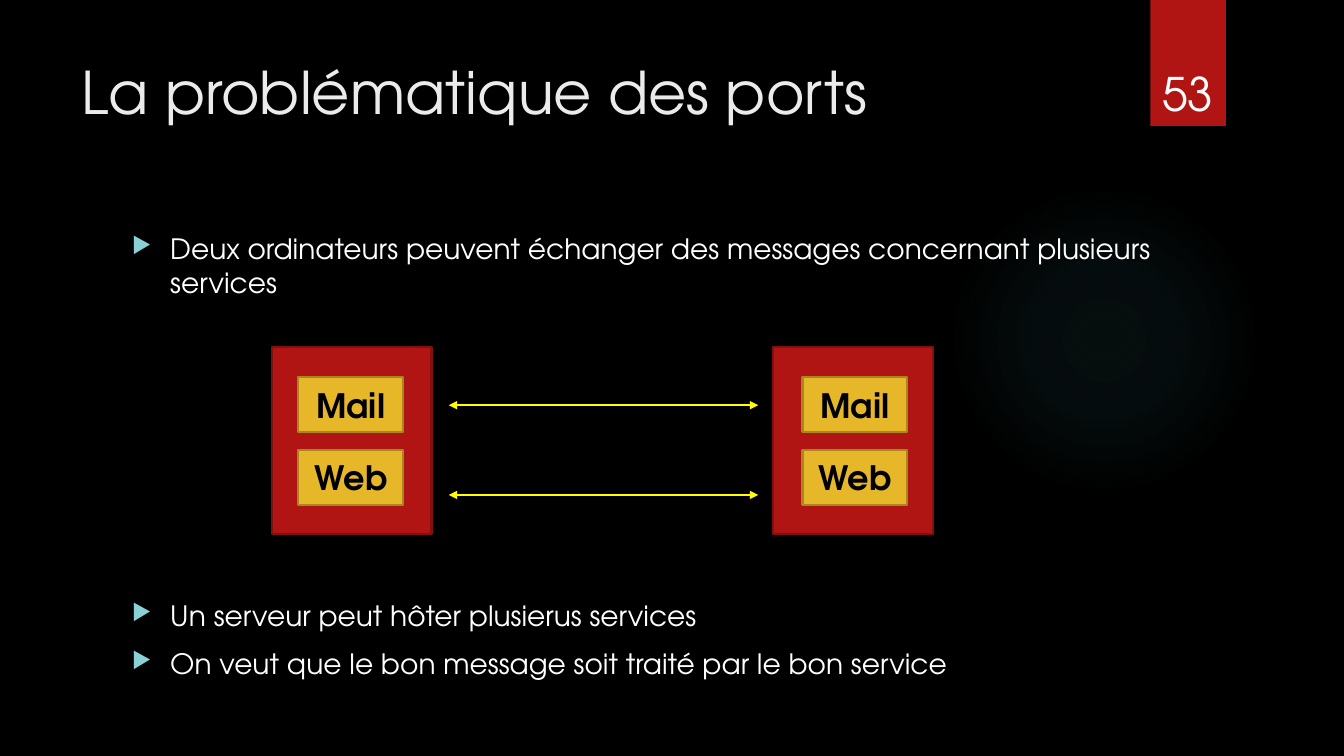
from dataclasses import dataclass

from lxml import etree
from pptx import Presentation
from pptx.dml.color import RGBColor
from pptx.enum.shapes import MSO_CONNECTOR, MSO_SHAPE
from pptx.enum.text import MSO_ANCHOR, MSO_AUTO_SIZE, PP_ALIGN
from pptx.oxml import parse_xml
from pptx.oxml.ns import nsdecls, qn
from pptx.util import Inches, Pt

RECTANGLE, OVAL = MSO_SHAPE.RECTANGLE, MSO_SHAPE.OVAL
STRAIGHT = MSO_CONNECTOR.STRAIGHT
TOP, MIDDLE = MSO_ANCHOR.TOP, MSO_ANCHOR.MIDDLE
LEFT, CENTER = PP_ALIGN.LEFT, PP_ALIGN.CENTER
NO_FIT = MSO_AUTO_SIZE.NONE

TITLE = "La problématique des ports"
PAGE_NUMBER = "53"
POINTS = [
    ("Deux ordinateurs peuvent échanger des messages concernant plusieurs services", 0),
    ("Un serveur peut hôter plusierus services", 214),
    ("On veut que le bon message soit traité par le bon service", 10),
]
SERVICES = ["Mail", "Web"]

SLIDE = (13.33, 7.5)
TITLE_AREA = (0.71, 0.5, 10.29, 1.53)
BODY_AREA = (1.21, 2.25, 11.09, 4.59)
RIBBON_AREA = (11.41, 0, 0.75, 1.25)
NUMBER_AREA = (11.43, 0.6, 0.78, 0.66)
GLOW_AREA = (9.41, 1.83, 3.08, 3.08)
GLOW_STOPS = [(0, 7), (36, 6), (69, 0)]

SERVER_TOP, SERVER_SIZE, SERVER_PITCH = (2.7, 3.44), (1.58, 1.86), 4.97
SERVICE_TOP, SERVICE_SIZE, SERVICE_PITCH = (2.96, 3.74), (1.04, 0.55), (5.0, 0.72)
ARROW_ENDS, ARROW_TOP, ARROW_PITCH = (4.45, 7.52), 4.02, 0.89
BULLET_INDENT = 0.38


@dataclass(frozen=True)
class Theme:
    font: str = "TeX Gyre Adventor"
    background: str = "000000"
    title: str = "EBEBEB"
    text: str = "FFFFFF"
    label: str = "000000"
    bullet: str = "8AD0D6"
    glow: str = "50B9C1"
    server: str = "B01513"
    server_edge: str = "82100E"
    service: str = "E6B729"
    service_edge: str = "AA871E"
    arrow: str = "FFFF00"
    title_size: int = 42
    number_size: int = 33
    label_size: int = 24
    body_size: int = 20
    line_width: float = 1.5


THEME = Theme()


def color(value):
    return RGBColor.from_string(value)


def inches(values):
    return [Inches(value) for value in values]


def write(para, text, size, ink, bold=False, align=LEFT):
    para.alignment = align
    span = para.add_run()
    span.text = text
    formats = {"name": THEME.font, "size": Pt(size), "bold": bold}
    for name, value in formats.items():
        setattr(span.font, name, value)
    span.font.color.rgb = color(ink)


def set_frame(frame, anchor=TOP):
    formats = {"word_wrap": True, "auto_size": NO_FIT, "vertical_anchor": anchor}
    for name, value in formats.items():
        setattr(frame, name, value)


def add_block(page, kind, area, fill=None, edge=None):
    block = page.shapes.add_shape(kind, *inches(area))
    block.shadow.inherit = False
    if fill:
        block.fill.solid()
        block.fill.fore_color.rgb = color(fill)
    else:
        block.fill.background()
    if edge:
        block.line.color.rgb = color(edge)
        block.line.width = Pt(THEME.line_width)
    else:
        block.line.fill.background()
    return block


def add_glow(page):
    glow = add_block(page, OVAL, GLOW_AREA)
    stops = "".join(
        f'<a:gs pos="{position * 1000}"><a:srgbClr val="{THEME.glow}">'
        f'<a:alpha val="{alpha * 1000}"/></a:srgbClr></a:gs>'
        for position, alpha in GLOW_STOPS
    )
    gradient = parse_xml(
        f'<a:gradFill {nsdecls("a")}><a:gsLst>{stops}</a:gsLst><a:path path="circle">'
        '<a:fillToRect l="50000" t="50000" r="50000" b="50000"/></a:path></a:gradFill>'
    )
    properties = glow.element.spPr
    properties.replace(properties.find(qn("a:noFill")), gradient)


def add_bullet(para):
    properties = para._p.get_or_add_pPr()
    properties.set("marL", str(Inches(BULLET_INDENT)))
    properties.set("indent", str(-Inches(BULLET_INDENT)))
    tint = etree.SubElement(properties, qn("a:buClr"))
    etree.SubElement(tint, qn("a:srgbClr"), val=THEME.bullet)
    etree.SubElement(properties, qn("a:buSzPct"), val="80000")
    etree.SubElement(properties, qn("a:buChar"), char="▶")


def add_points(page):
    frame = page.shapes.add_textbox(*inches(BODY_AREA)).text_frame
    set_frame(frame)
    for index, (text, gap) in enumerate(POINTS):
        para = frame.add_paragraph() if index else frame.paragraphs[0]
        add_bullet(para)
        para.space_before = Pt(gap)
        write(para, text, THEME.body_size, THEME.text)


def add_arrow(page, top):
    start, end = ARROW_ENDS
    arrow = page.shapes.add_connector(STRAIGHT, *inches((start, top, end, top)))
    arrow.line.color.rgb = color(THEME.arrow)
    arrow.line.width = Pt(THEME.line_width)
    outline = arrow.line._get_or_add_ln()
    for tag in ("a:headEnd", "a:tailEnd"):
        etree.SubElement(outline, qn(tag), type="triangle")
    etree.SubElement(arrow.element.spPr, qn("a:effectLst"))


def add_servers(page):
    left, top = SERVER_TOP
    service_left, service_top = SERVICE_TOP
    across, down = SERVICE_PITCH
    for column in range(2):
        area = (left + column * SERVER_PITCH, top, *SERVER_SIZE)
        add_block(page, RECTANGLE, area, THEME.server, THEME.server_edge)
        for row, service in enumerate(SERVICES):
            area = (service_left + column * across, service_top + row * down, *SERVICE_SIZE)
            block = add_block(page, RECTANGLE, area, THEME.service, THEME.service_edge)
            set_frame(block.text_frame, MIDDLE)
            write(block.text_frame.paragraphs[0], service, THEME.label_size,
                  THEME.label, True, CENTER)
    for row in range(len(SERVICES)):
        add_arrow(page, ARROW_TOP + row * ARROW_PITCH)


def main():
    deck = Presentation()
    deck.slide_width, deck.slide_height = inches(SLIDE)
    page = deck.slides.add_slide(deck.slide_layouts[5])
    page.background.fill.solid()
    page.background.fill.fore_color.rgb = color(THEME.background)

    add_glow(page)
    add_block(page, RECTANGLE, RIBBON_AREA, THEME.server)

    title = page.shapes.title
    for name, value in zip(("left", "top", "width", "height"), inches(TITLE_AREA)):
        setattr(title, name, value)
    set_frame(title.text_frame)
    write(title.text_frame.paragraphs[0], TITLE, THEME.title_size, THEME.title)

    add_points(page)
    add_servers(page)

    number = page.shapes.add_textbox(*inches(NUMBER_AREA)).text_frame
    set_frame(number)
    write(number.paragraphs[0], PAGE_NUMBER, THEME.number_size, THEME.text)
    deck.save("out.pptx")


if __name__ == "__main__":
    main()
